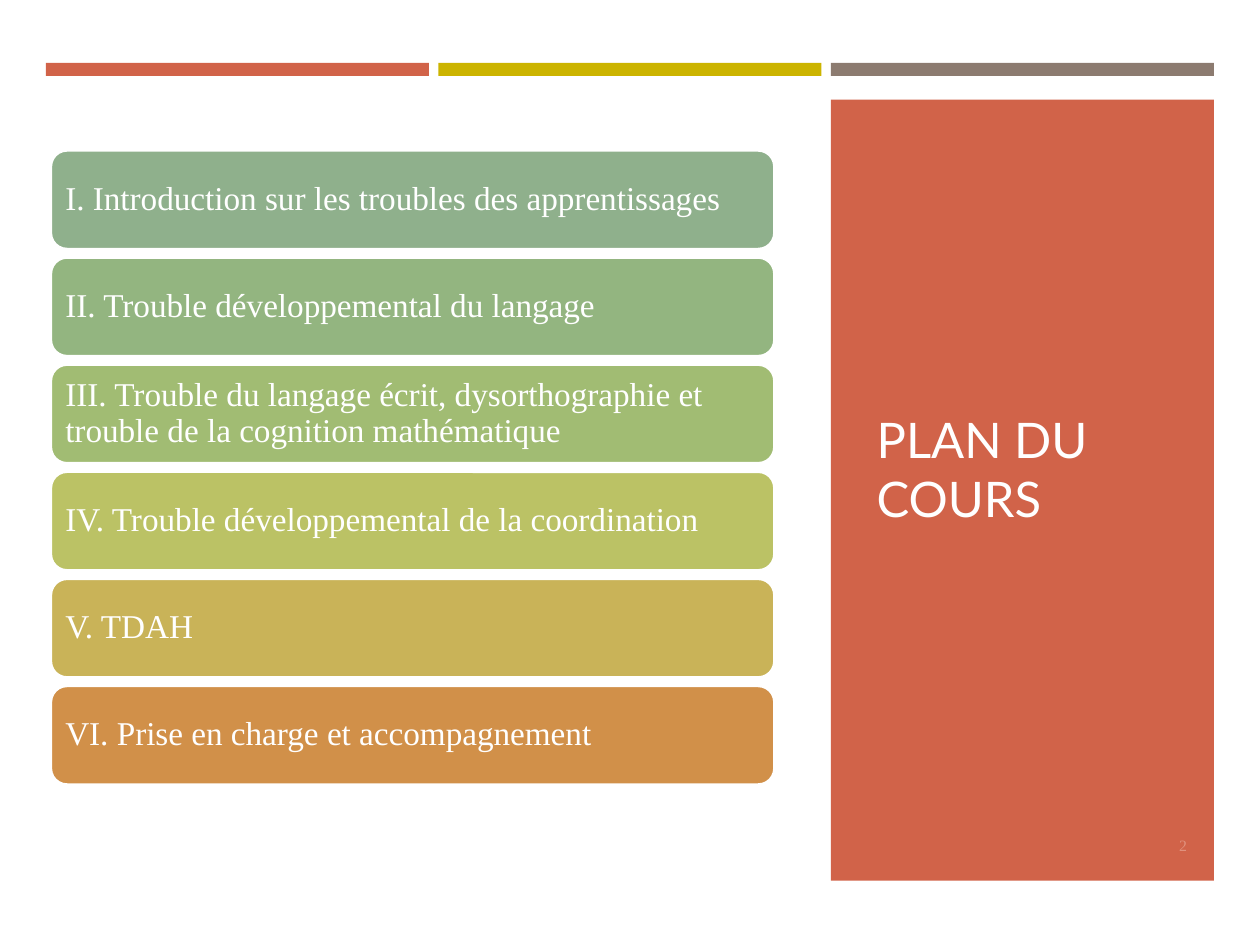
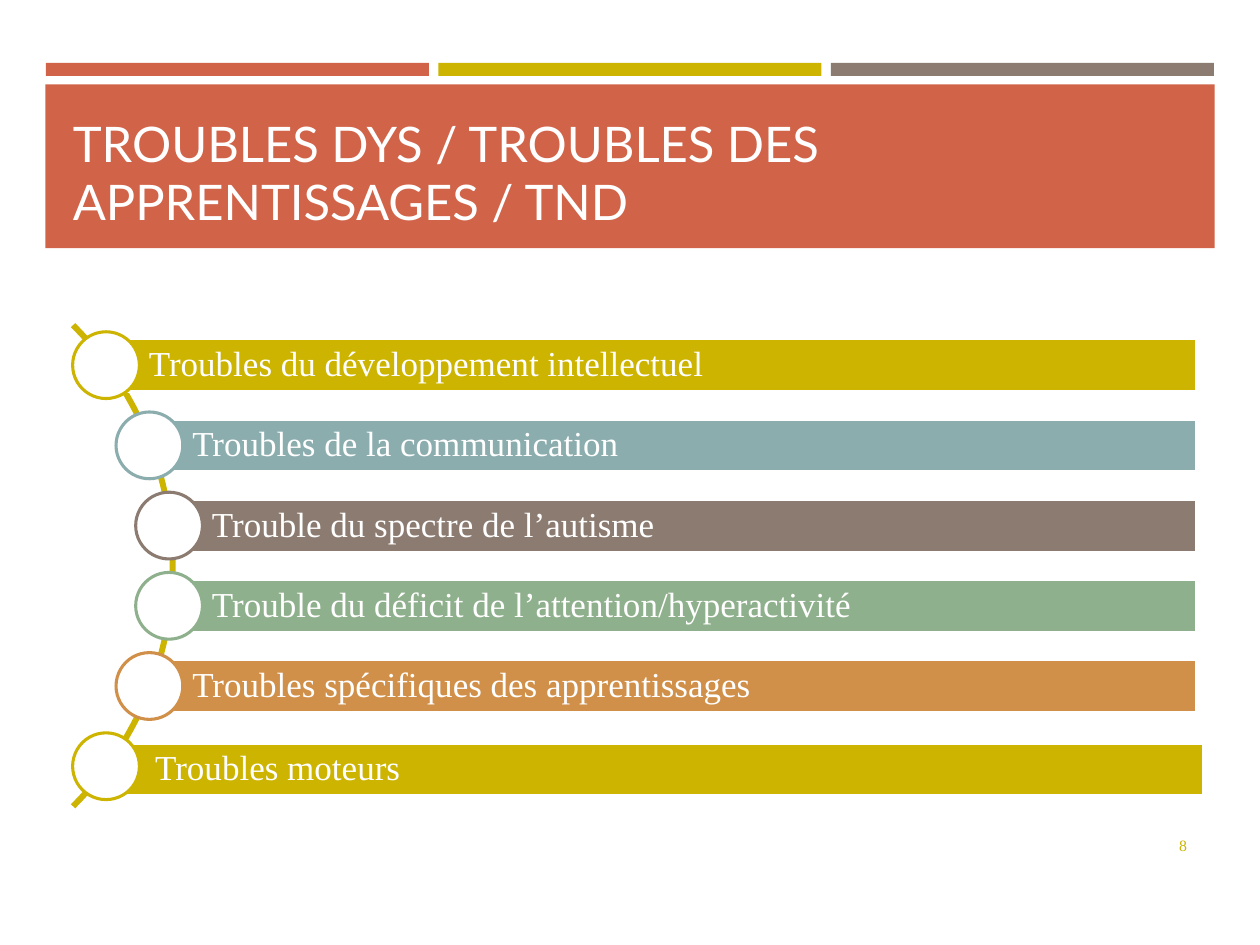
from math import cos, sin, sqrt, radians
from pptx import Presentation
from pptx.dml.color import RGBColor as Rgb
from pptx.enum.shapes import MSO_SHAPE as Shape
from pptx.enum.text import MSO_ANCHOR as Anchor, PP_ALIGN as Align
from pptx.util import Inches, Pt

COLS, ROWS = 100, 75
CELL = Inches(0.1)
RED, GOLD, TAUPE = "D16349", "CCB400", "8C7B70"
BLUE, GREEN, AMBER = "8CADAE", "8FB08C", "D19049"
WHITE, BLUSH = "FFFFFF", "E0917D"
HEAD, BODY = "Lato", "Times New Roman"
PAGE = (86.6, 65.1, 8.6, 4)

PLAN = [
    ("I. Introduction sur les troubles des apprentissages", GREEN),
    ("II. Trouble développemental du langage", "93B580"),
    ("III. Trouble du langage écrit, dysorthographie et "
     "trouble de la cognition mathématique", "A1BC73"),
    ("IV. Trouble développemental de la coordination", "BBC265"),
    ("V. TDAH", "C9B358"),
    ("VI. Prise en charge et accompagnement", AMBER),
]
TYPES = [
    ("Troubles du développement intellectuel", GOLD, 0),
    ("Troubles de la communication", BLUE, 0),
    ("Trouble du spectre de l’autisme", TAUPE, 0),
    ("Trouble du déficit de l’attention/hyperactivité", GREEN, 0),
    ("Troubles spécifiques des apprentissages", AMBER, 0),
    ("Troubles moteurs", GOLD, 0.5),
]


def grid(*cells):
    return [round(cell * CELL) for cell in cells]


def paint(part, color):
    part.solid()
    part.fore_color.rgb = Rgb.from_string(color)


def edge(shape, color, width):
    paint(shape.line.fill, color)
    shape.line.width = Pt(width)


def draw(slide, kind, box, color, rim=None, width=1.75):
    shape = slide.shapes.add_shape(kind, *grid(*box))
    shape.shadow.inherit = False
    paint(shape.fill, color)
    if rim:
        edge(shape, rim, width)
    else:
        shape.line.fill.background()
    return shape


def write(shape, text, size, color=WHITE, font=BODY, anchor=Anchor.MIDDLE,
          align=Align.LEFT, space=1.0, pads=(1, 0.5, 1, 0.5)):
    frame = shape.text_frame
    frame.word_wrap = True
    frame.vertical_anchor = anchor
    (frame.margin_left, frame.margin_top,
     frame.margin_right, frame.margin_bottom) = grid(*pads)
    para = frame.paragraphs[0]
    para.alignment, para.line_spacing = align, space
    run = para.add_run()
    run.text = text
    run.font.name, run.font.size = font, Pt(size)
    run.font.color.rgb = Rgb.from_string(color)


def label(slide, box, text, size, **look):
    write(slide.shapes.add_textbox(*grid(*box)), text, size, **look)


def stripes(slide, box):
    left, top, width, height = box
    gap = 0.75
    each = (width - 2 * gap) / 3
    for i, color in enumerate((RED, GOLD, TAUPE)):
        draw(slide, Shape.RECTANGLE,
             (left + i * (each + gap), top, each, height), color)


def panel(slide, box, text, pads, anchor):
    left, top, width, height = box
    west, north, east, south = pads
    draw(slide, Shape.RECTANGLE, box, RED)
    label(slide, (left + west, top + north, width - west - east,
                  height - north - south),
          text, 28, font=HEAD, anchor=anchor)


def cards(slide, box, items):
    left, top, width, height = box
    pitch = height / len(items)
    for i, (text, color) in enumerate(items):
        card = draw(slide, Shape.ROUNDED_RECTANGLE,
                    (left, top + i * pitch, width, pitch - 0.6),
                    color, WHITE, 2)
        write(card, text, 19, space=0.9, pads=(0.8,) * 4)


def arc(slide, hub, mid, reach):
    spots = [grid(hub + reach * cos(radians(turn)),
                  mid + reach * sin(radians(turn)))
             for turn in range(-45, 46)]
    path = slide.shapes.build_freeform(*spots[0])
    path.add_line_segments(spots[1:], close=False)
    curve = path.convert_to_shape()
    curve.shadow.inherit = False
    curve.fill.background()
    edge(curve, GOLD, 3.4)


def fan(slide, box, items):
    left, top, width, height = box
    reach, bar, dot = 27, 4.2, 5.3
    hub, mid = left - reach * cos(radians(45)), top + height / 2
    pitch = height / 6
    arc(slide, hub, mid, reach)
    for i, (text, color, shift) in enumerate(items):
        drop = (i - (len(items) - 1) / 2) * pitch
        x, y = hub + sqrt(reach ** 2 - drop ** 2) - 0.1, mid + drop
        strip = draw(slide, Shape.RECTANGLE,
                     (x + shift, y - bar / 2 + shift / 2,
                      left + width - x, bar), color, WHITE)
        write(strip, text, 20, space=0.9, pads=(3.4, 0.6, 0.6, 0.6))
        draw(slide, Shape.OVAL, (x - dot / 2, y - dot / 2, dot, dot),
             WHITE, color)


def start(deck):
    slide = deck.slides.add_slide(deck.slide_layouts[6])
    stripes(slide, (3.65, 5, 92.7, 1.03))
    return slide


def number(slide, text, color):
    label(slide, PAGE, text, 9, color=color, align=Align.RIGHT)


def outline(deck):
    slide = start(deck)
    panel(slide, (65.95, 7.9, 30.4, 62), "PLAN DU COURS",
          (2.65, 3.5, 2.75, 7), Anchor.MIDDLE)
    cards(slide, (4, 11.9, 57.5, 51), PLAN)
    number(slide, "2", BLUSH)


def groups(deck):
    slide = start(deck)
    panel(slide, (3.6, 6.7, 92.8, 13),
          "TROUBLES DYS / TROUBLES DES APPRENTISSAGES / TND",
          (1.2, 1, 1.1, 0.9), Anchor.BOTTOM)
    number(slide, "8", GOLD)
    fan(slide, (5.8, 25.8, 89.2, 38.2), TYPES)


def main():
    deck = Presentation()
    deck.slide_width, deck.slide_height = grid(COLS, ROWS)
    outline(deck)
    groups(deck)
    deck.save("out.pptx")


if __name__ == "__main__":
    main()
